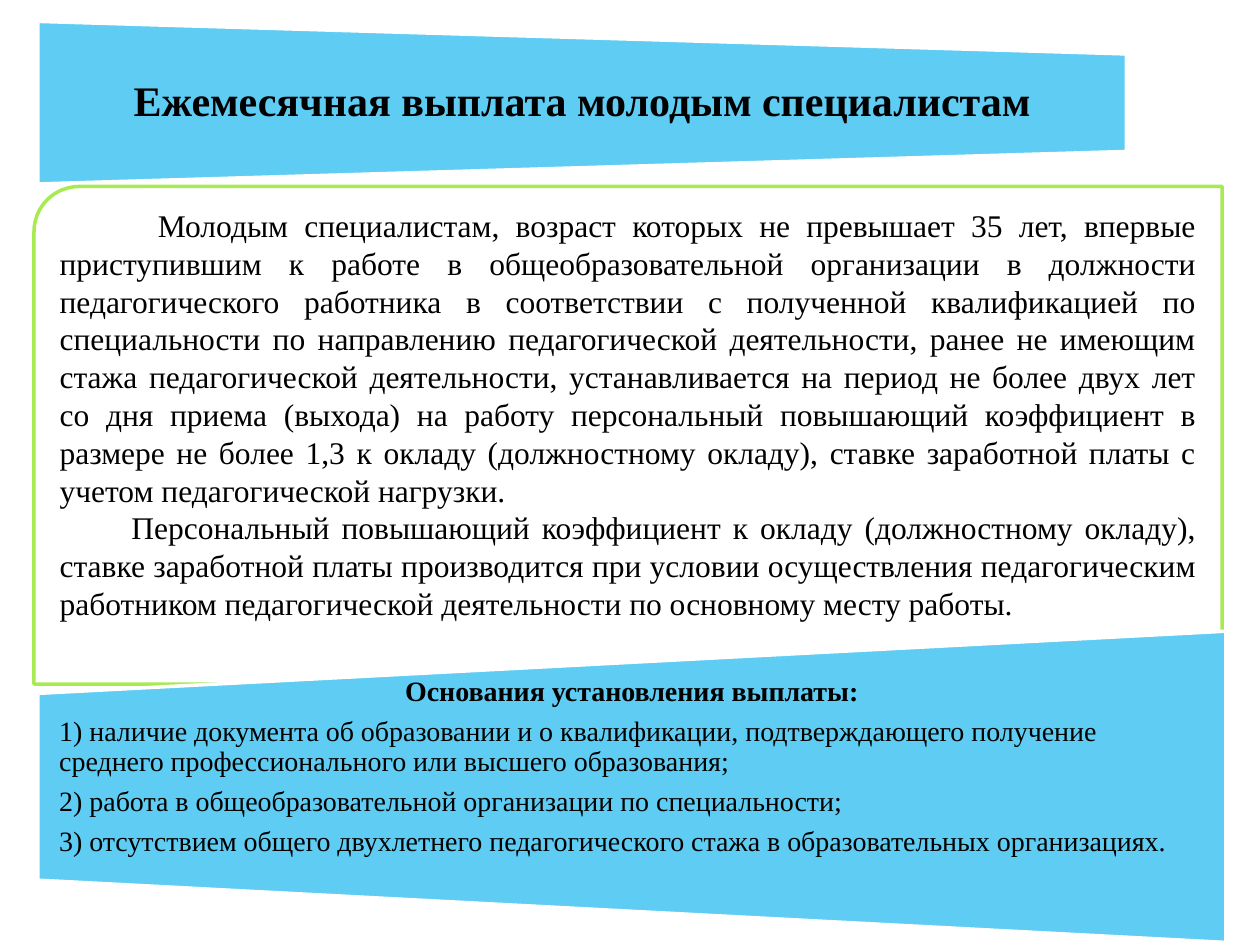
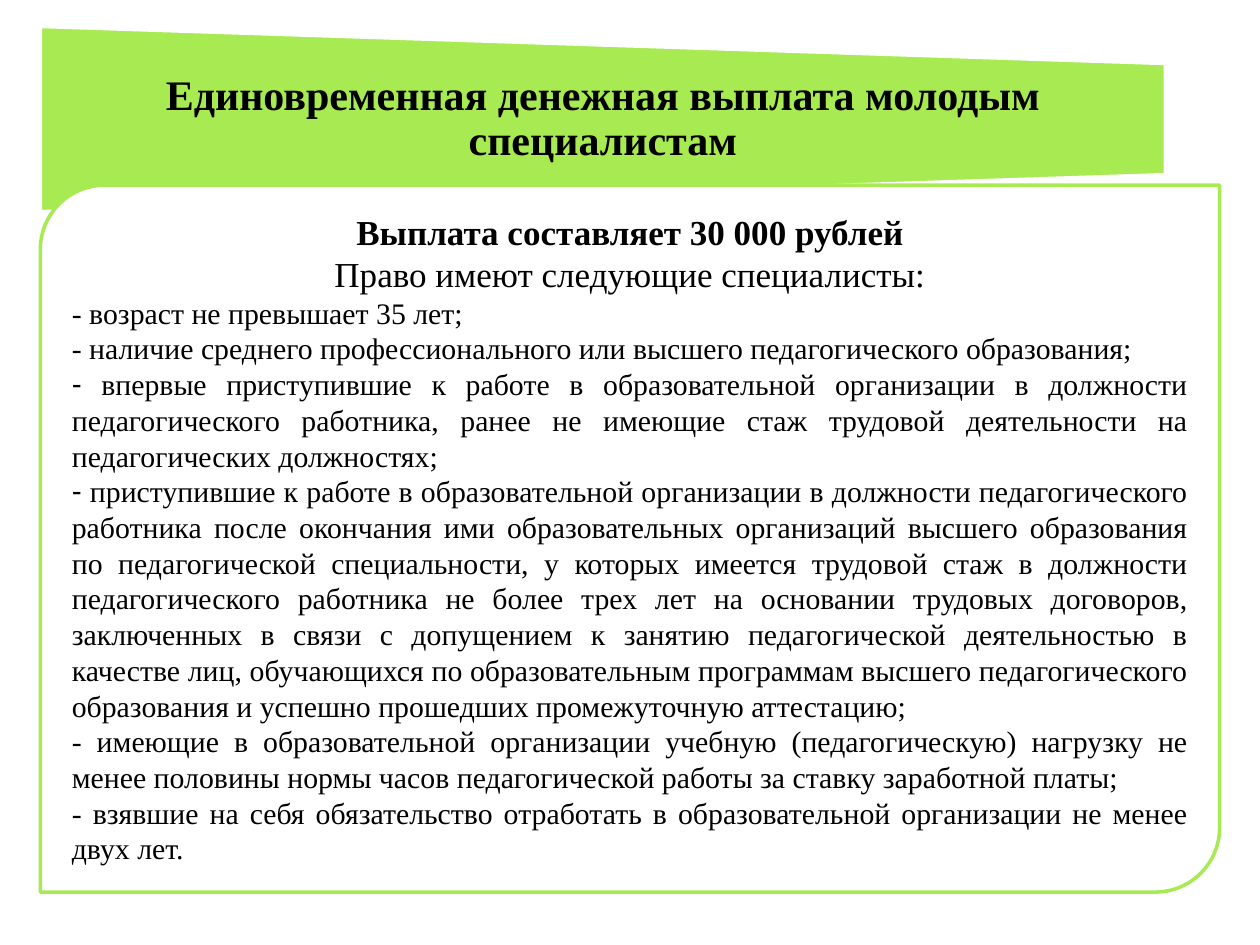
from dataclasses import dataclass

from lxml import etree
from pptx import Presentation
from pptx.dml.color import RGBColor
from pptx.enum.shapes import MSO_SHAPE
from pptx.enum.text import MSO_ANCHOR, MSO_AUTO_SIZE, PP_ALIGN
from pptx.oxml.ns import qn
from pptx.util import Inches, Pt

BLUE = RGBColor(0x5E, 0xCC, 0xF3)
GREEN = RGBColor(0xA7, 0xEA, 0x52)
WHITE = RGBColor(0xFF, 0xFF, 0xFF)
BLACK = RGBColor(0x00, 0x00, 0x00)
FONT = "Times New Roman"
LEFT, CENTER, JUSTIFY = PP_ALIGN.LEFT, PP_ALIGN.CENTER, PP_ALIGN.JUSTIFY

CARD_CORNER = 0.091
BAND_TEXT = {"anchor": MSO_ANCHOR.MIDDLE, "insets": (0.17, 0, 0.17, 0)}
BAND_LINES = 0.9


@dataclass
class Line:
    """One paragraph with its look."""
    text: str
    size: float
    align: int = JUSTIFY
    bold: bool = False
    indent: float = 0
    bullet: str = ""
    spacing: float = 1.0
    after: float = 0


def set_values(target, values):
    for name, value in values.items():
        setattr(target, name, value)


def write_lines(frame, lines, anchor=MSO_ANCHOR.TOP, insets=(0.1, 0.05, 0.1, 0.05)):
    left, top, right, bottom = map(Inches, insets)
    set_values(frame, {
        "word_wrap": True, "auto_size": MSO_AUTO_SIZE.NONE, "vertical_anchor": anchor,
        "margin_left": left, "margin_top": top,
        "margin_right": right, "margin_bottom": bottom})
    for number, line in enumerate(lines):
        paragraph = frame.add_paragraph() if number else frame.paragraphs[0]
        properties = paragraph._p.get_or_add_pPr()
        properties.set("marL", "0")
        properties.set("indent", str(Inches(line.indent)))
        if line.bullet:
            etree.SubElement(properties, qn("a:buFontTx"))
            etree.SubElement(properties, qn("a:buChar")).set("char", line.bullet)
        else:
            etree.SubElement(properties, qn("a:buNone"))
        set_values(paragraph, {
            "alignment": line.align, "line_spacing": line.spacing,
            "space_before": Pt(0), "space_after": Pt(line.after)})
        run = paragraph.add_run()
        run.text = line.text
        set_values(run.font, {"name": FONT, "size": Pt(line.size), "bold": line.bold})
        run.font.color.rgb = BLACK


def paint(shape, fill, outline):
    shape.shadow.inherit = False
    shape.fill.solid()
    shape.fill.fore_color.rgb = fill
    shape.line.color.rgb = outline
    shape.line.width = Pt(2)


def place_over(backing, placeholder, box):
    """Put a placeholder on the box, directly in front of its backing shape."""
    set_values(placeholder, dict(zip(("left", "top", "width", "height"), map(Inches, box))))
    backing._element.addnext(placeholder._element)


def add_band(slide, box, color, rotation, placeholder, lines, **text_format):
    """Trapezoid lying on its side; the text takes the middle 60 % of its height."""
    left, top, width, height = box
    band = slide.shapes.add_shape(
        MSO_SHAPE.FLOWCHART_MANUAL_OPERATION,
        Inches(left + (width - height) / 2), Inches(top + (height - width) / 2),
        Inches(height), Inches(width))
    band.rotation = rotation
    paint(band, color, WHITE)
    place_over(band, placeholder, (left, top + 0.2 * height, width, 0.6 * height))
    write_lines(placeholder.text_frame, lines, **{**BAND_TEXT, **text_format})


def add_title_band(slide, box, color, title):
    heading = Line(title, 24, CENTER, bold=True, spacing=BAND_LINES)
    add_band(slide, box, color, 270, slide.shapes.title, [heading])


def add_card(slide, box):
    card = slide.shapes.add_shape(MSO_SHAPE.ROUND_2_DIAG_RECTANGLE, *map(Inches, box))
    card.adjustments[0], card.adjustments[1] = CARD_CORNER, 0
    paint(card, WHITE, GREEN)
    return card


def build_monthly_payment(slide):
    add_title_band(slide, (0.3, 0.17, 8.64, 1.29), BLUE,
                   "Ежемесячная выплата молодым специалистам")

    # Conditions of the payment
    conditions = add_card(slide, (0.27, 1.48, 9.43, 3.95))
    write_lines(conditions.text_frame, [
        Line("Молодым специалистам, возраст которых не превышает 35 лет, впервые приступившим "
             "к работе в общеобразовательной организации в должности педагогического работника "
             "в соответствии с полученной квалификацией по специальности по направлению "
             "педагогической деятельности, ранее не имеющим стажа педагогической деятельности, "
             "устанавливается на период не более двух лет со дня приема (выхода) на работу "
             "персональный повышающий коэффициент в размере не более 1,3 к окладу "
             "(должностному окладу), ставке заработной платы с учетом педагогической нагрузки.",
             18, indent=0.78),
        Line("Персональный повышающий коэффициент к окладу (должностному окладу), ставке "
             "заработной платы производится при условии осуществления педагогическим работником "
             "педагогической деятельности по основному месту работы.", 18, indent=0.57)])

    # Grounds for the payment
    grounds = [
        "1) наличие документа об образовании и о квалификации, подтверждающего получение "
        "среднего профессионального или высшего образования;",
        "2) работа в общеобразовательной организации по специальности;",
        "3) отсутствием общего двухлетнего педагогического стажа в образовательных "
        "организациях."]
    rhythm = {"spacing": BAND_LINES, "after": 5.6}
    lines = [Line("Основания установления выплаты:", 16, CENTER, bold=True, **rhythm)]
    lines += [Line(ground, 16, LEFT, **rhythm) for ground in grounds]
    add_band(slide, (0.3, 5.01, 9.43, 2.47), BLUE, 90, slide.placeholders[1], lines,
             insets=(0.17, 0, 0.17, 0.31))


def build_single_payment(slide):
    add_title_band(slide, (0.32, 0.21, 8.93, 1.47), GREEN,
                   "Единовременная денежная выплата молодым специалистам")

    # Who is entitled to the payment
    box = (0.32, 1.47, 9.36, 5.61)
    entitled = slide.placeholders[1]
    place_over(add_card(slide, box), entitled, box)
    requirements = [
        ("- возраст не превышает 35 лет;", ""),
        ("- наличие среднего профессионального или высшего педагогического образования;", ""),
        (" впервые приступившие к работе в образовательной организации в должности "
         "педагогического работника, ранее не имеющие стаж трудовой деятельности на "
         "педагогических должностях;", "-"),
        (" приступившие к работе в образовательной организации в должности педагогического "
         "работника после окончания ими образовательных организаций высшего образования по "
         "педагогической специальности, у которых имеется трудовой стаж в должности "
         "педагогического работника не более трех лет на основании трудовых договоров, "
         "заключенных в связи с допущением к занятию педагогической деятельностью в качестве "
         "лиц, обучающихся по образовательным программам высшего педагогического образования "
         "и успешно прошедших промежуточную аттестацию;", "-"),
        ("- имеющие в образовательной организации учебную (педагогическую) нагрузку не менее "
         "половины нормы часов педагогической работы за ставку заработной платы;", ""),
        ("- взявшие на себя обязательство отработать в образовательной организации не менее "
         "двух лет.", "")]
    lines = [Line("Выплата составляет 30 000 рублей", 20, CENTER, bold=True),
             Line("Право имеют следующие специалисты:", 20, CENTER)]
    lines += [Line(text, 17, bullet=bullet) for text, bullet in requirements]
    write_lines(entitled.text_frame, lines, insets=(0.25, 0.2, 0.25, 0.2))


def main():
    deck = Presentation()
    deck.slide_width, deck.slide_height = Inches(10), Inches(7.5)
    for build in (build_monthly_payment, build_single_payment):
        build(deck.slides.add_slide(deck.slide_layouts[1]))
    deck.save("out.pptx")


if __name__ == "__main__":
    main()
